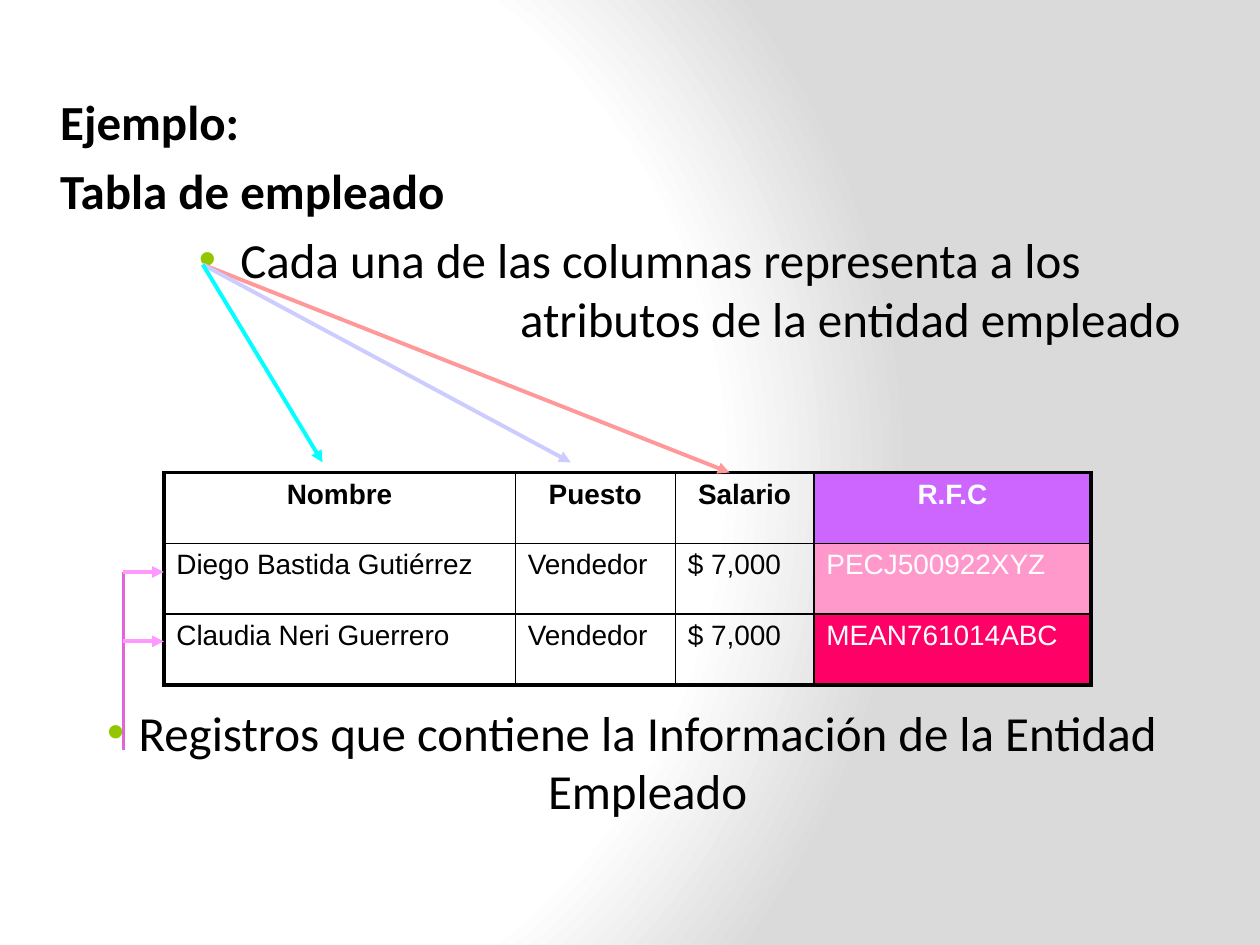
from dataclasses import dataclass
from typing import Optional

from pptx import Presentation, util as u
from pptx.dml.color import RGBColor
from pptx.enum import shapes, text
from pptx.oxml import parse_xml
from pptx.oxml.ns import nsdecls, qn
from pptx.oxml.xmlchemy import OxmlElement

WIDTH, HEIGHT = u.Inches(10), u.Inches(7.5)
LEFT, CENTER = text.PP_ALIGN.LEFT, text.PP_ALIGN.CENTER


@dataclass(frozen=True)
class Theme:
    ink: str = "000000"
    paper: str = "FFFFFF"
    shade: str = "DADADA"
    bullet: str = "94C600"
    bracket: str = "E066D7"
    record: str = "FF99FF"
    key_fills: tuple = ("CC66FF", "FF99CC", "FF0066")
    body_font: str = "Calibri"
    table_font: str = "Arial"
    body_size: float = 28
    table_size: float = 16
    thick: float = 2.25
    thin: float = 1


@dataclass(frozen=True)
class Line:
    """A body paragraph; margin and hang are percent of the slide's width."""
    words: str
    margin: float = 3.8
    hang: float = 2.5
    bold: bool = False
    bullet: bool = False
    align: text.PP_ALIGN = LEFT
    before: float = 5.6


@dataclass(frozen=True)
class Stroke:
    """A straight line; its ends are in percent of the slide's size."""
    start: tuple
    end: tuple
    color: str
    arrow: bool = True


THEME = Theme()

BODY = [
    Line("Ejemplo:", bold=True),
    Line("Tabla de empleado", bold=True),
    Line("Cada una de las columnas representa a los", 15.6, 3.3, bullet=True),
    Line("atributos de la entidad empleado", 37.8, 0, before=0),
    Line("Registros que contiene la Información de la Entidad Empleado",
         bullet=True, align=CENTER, before=203),
]

EMPLOYEES = [
    ("Nombre", "Puesto", "Salario", "R.F.C"),
    ("Diego Bastida Gutiérrez", "Vendedor", "$ 7,000", "PECJ500922XYZ"),
    ("Claudia Neri Guerrero", "Vendedor", "$ 7,000", "MEAN761014ABC"),
]
TABLE_LEFT, TABLE_TOP, ROW_HEIGHT = 13, 50, 7.5
COLUMN_WIDTHS = (27.9, 12.7, 11, 22)

ATTRIBUTES = (16.1, 28)
BRACKET_X, RECORD_ROWS = 9.8, (60.53, 67.87)
STROKES = [
    Stroke(ATTRIBUTES, (57.9, 50), "FF9999"),
    Stroke(ATTRIBUTES, (45.3, 48.93), "CCCCFF"),
    Stroke(ATTRIBUTES, (25.6, 48.93), "00FFFF"),
    Stroke((BRACKET_X, RECORD_ROWS[0]), (BRACKET_X, 79.33), THEME.bracket, arrow=False),
    *(Stroke((BRACKET_X, row), (TABLE_LEFT, row), THEME.record) for row in RECORD_ROWS),
]


def across(percent: float) -> int:
    return round(WIDTH * percent / 100)


def down(percent: float) -> int:
    return round(HEIGHT * percent / 100)


def style(paragraph, font: str, size: float, color: str, bold: bool) -> None:
    paragraph.font.name = font
    paragraph.font.size = u.Pt(size)
    paragraph.font.bold = bold
    paragraph.font.color.rgb = RGBColor.from_string(color)


def paint_background(slide) -> None:
    stops = "".join(
        f'<a:gs pos="{pos}"><a:srgbClr val="{color}"/></a:gs>'
        for pos, color in ((0, THEME.paper), (75000, THEME.paper), (100000, THEME.shade)))
    slide.element.cSld.insert(0, parse_xml(
        f'<p:bg {nsdecls("p", "a")}><p:bgPr><a:gradFill rotWithShape="1">'
        f'<a:gsLst>{stops}</a:gsLst><a:path path="circle">'
        '<a:fillToRect l="20000" t="50000" r="100000" b="50000"/></a:path>'
        '</a:gradFill><a:effectLst/></p:bgPr></p:bg>'))


def add_bullet(properties) -> None:
    for xml in (
        f'<a:buClr {nsdecls("a")}><a:srgbClr val="{THEME.bullet}"/></a:buClr>',
        f'<a:buFont {nsdecls("a")} typeface="{THEME.table_font}"/>',
        f'<a:buChar {nsdecls("a")} char="•"/>',
    ):
        properties.insert_element_before(parse_xml(xml), "a:tabLst", "a:defRPr", "a:extLst")


def add_body(slide, lines: list[Line]) -> None:
    frame = slide.shapes.add_textbox(across(2.5), down(9.07), across(94), down(82.13)).text_frame
    frame.word_wrap = True
    for index, line in enumerate(lines):
        paragraph = frame.add_paragraph() if index else frame.paragraphs[0]
        paragraph.text = line.words
        paragraph.alignment = line.align
        paragraph.space_before = u.Pt(line.before)
        style(paragraph, THEME.body_font, THEME.body_size, THEME.ink, line.bold)
        properties = paragraph._p.get_or_add_pPr()
        properties.set("marL", str(across(line.margin)))
        properties.set("indent", str(-across(line.hang)))
        if line.bullet:
            add_bullet(properties)


def set_borders(cell, outer: dict[str, bool]) -> None:
    """Draw the outer sides of the table thick and the inner ones thin."""
    for side, is_outer in outer.items():
        width = u.Pt(THEME.thick if is_outer else THEME.thin)
        cell._tc.get_or_add_tcPr().append(parse_xml(
            f'<a:ln{side} {nsdecls("a")} w="{width}"><a:solidFill>'
            f'<a:srgbClr val="{THEME.ink}"/></a:solidFill></a:ln{side}>'))


def fill_cell(cell, color: Optional[str]) -> None:
    if color is None:
        cell.fill.background()
    else:
        cell.fill.solid()
        cell.fill.fore_color.rgb = RGBColor.from_string(color)


def add_employee_table(slide) -> None:
    last_row, last_column = len(EMPLOYEES) - 1, len(COLUMN_WIDTHS) - 1
    table = slide.shapes.add_table(
        last_row + 1, last_column + 1, across(TABLE_LEFT), down(TABLE_TOP),
        across(sum(COLUMN_WIDTHS)), down(ROW_HEIGHT * len(EMPLOYEES))).table
    table.first_row = table.horz_banding = False
    for column, width in zip(table.columns, COLUMN_WIDTHS):
        column.width = across(width)
    for r, record in enumerate(EMPLOYEES):
        table.rows[r].height = down(ROW_HEIGHT)
        for c, value in enumerate(record):
            cell, is_key, is_header = table.cell(r, c), c == last_column, r == 0
            set_borders(cell, {"L": c == 0, "R": is_key, "T": is_header, "B": r == last_row})
            fill_cell(cell, THEME.key_fills[r] if is_key else None)
            cell.text = value
            paragraph = cell.text_frame.paragraphs[0]
            paragraph.alignment = CENTER if is_header else LEFT
            paragraph.space_before = u.Pt(THEME.table_size * 0.2)
            style(paragraph, THEME.table_font, THEME.table_size,
                  THEME.paper if is_key else THEME.ink, is_header)


def add_stroke(slide, stroke: Stroke) -> None:
    (x1, y1), (x2, y2) = stroke.start, stroke.end
    connector = slide.shapes.add_connector(
        shapes.MSO_CONNECTOR.STRAIGHT, across(x1), down(y1), across(x2), down(y2))
    connector.line.color.rgb = RGBColor.from_string(stroke.color)
    connector.line.width = u.Pt(THEME.thick)
    if stroke.arrow:
        tail = OxmlElement("a:tailEnd")
        tail.set("type", "triangle")
        connector.line._get_or_add_ln().append(tail)
    connector._element.find(qn("p:spPr")).append(OxmlElement("a:effectLst"))


def main() -> None:
    deck = Presentation()
    deck.slide_width, deck.slide_height = WIDTH, HEIGHT
    slide = deck.slides.add_slide(deck.slide_layouts[6])
    paint_background(slide)
    add_body(slide, BODY)
    add_employee_table(slide)
    for stroke in STROKES:
        add_stroke(slide, stroke)
    deck.save("out.pptx")


if __name__ == "__main__":
    main()
